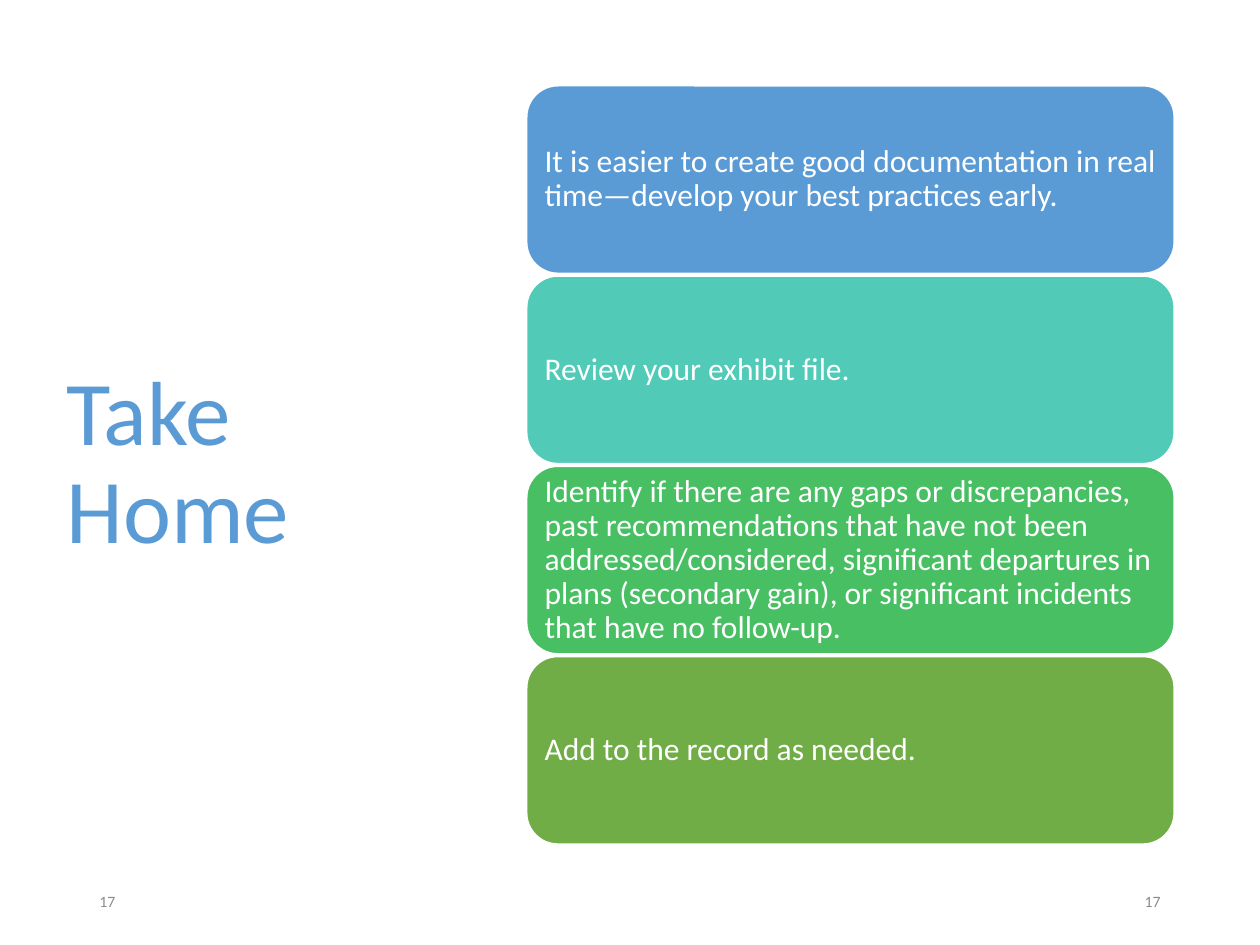
from pptx import Presentation
from pptx.dml.color import RGBColor
from pptx.enum.shapes import MSO_SHAPE
from pptx.enum.text import MSO_ANCHOR, PP_ALIGN
from pptx.util import Inches, Pt

ROUND = MSO_SHAPE.ROUNDED_RECTANGLE
MIDDLE = MSO_ANCHOR.MIDDLE
LEFT, RIGHT = PP_ALIGN.LEFT, PP_ALIGN.RIGHT

WHITE = RGBColor(0xFF, 0xFF, 0xFF)
GRAY = RGBColor(0x8C, 0x8C, 0x8C)
BLUE = RGBColor(0x5B, 0x9B, 0xD5)
TEAL = RGBColor(0x52, 0xCA, 0xB8)
GREEN = RGBColor(0x49, 0xBF, 0x64)
OLIVE = RGBColor(0x70, 0xAD, 0x47)

CARDS = [
    ("It is easier to create good documentation in real time—develop your best practices early.", BLUE),
    ("Review your exhibit file.", TEAL),
    ("Identify if there are any gaps or discrepancies, past recommendations that have not been "
     "addressed/considered, significant departures in plans (secondary gain), or significant "
     "incidents that have no follow-up.", GREEN),
    ("Add to the record as needed.", OLIVE),
]
TOP, STEP = 0.68, 1.51


def write(frame, text, size=18, color=WHITE, align=LEFT, lines=0.9, font="Calibri"):
    frame.word_wrap = True
    frame.vertical_anchor = MIDDLE
    para = frame.paragraphs[0]
    para.alignment = align
    para.line_spacing = lines
    run = para.add_run()
    run.text = text
    run.font.name = font
    run.font.size = Pt(size)
    run.font.color.rgb = color


class Deck:
    inset = Inches(0.07)

    def __init__(self):
        self.file = Presentation()
        self.file.slide_width = Inches(10)
        self.file.slide_height = Inches(7.5)
        self.slide = self.file.slides.add_slide(self.file.slide_layouts[5])

    def title(self, text, x, y, w, h):
        head = self.slide.shapes.title
        head.left, head.top, head.width, head.height = map(Inches, (x, y, w, h))
        write(head.text_frame, text, size=52, color=BLUE)

    def label(self, text, x, y, w, h, **style):
        box = self.slide.shapes.add_textbox(*map(Inches, (x, y, w, h)))
        write(box.text_frame, text, **style)

    def card(self, text, fill, x, y, w, h):
        card = self.slide.shapes.add_shape(ROUND, *map(Inches, (x, y, w, h)))
        card.shadow.inherit = False
        card.fill.solid()
        card.fill.fore_color.rgb = fill
        card.line.color.rgb = WHITE
        card.line.width = Pt(1)
        frame = card.text_frame
        frame.margin_left = frame.margin_right = self.inset
        frame.margin_top = frame.margin_bottom = self.inset
        write(frame, text)


def main():
    deck = Deck()
    deck.title("Take Home", 0.43, TOP, 3.12, 6.02)
    for x, align in ((0.69, LEFT), (7.06, RIGHT)):
        deck.label("17", x, 6.95, 2.25, 0.4, size=9, color=GRAY, align=align, lines=1.0)
    for row, (text, fill) in enumerate(CARDS):
        deck.card(text, fill, 4.18, TOP + row * STEP, 5.14, 1.49)
    deck.file.save("out.pptx")


if __name__ == "__main__":
    main()
